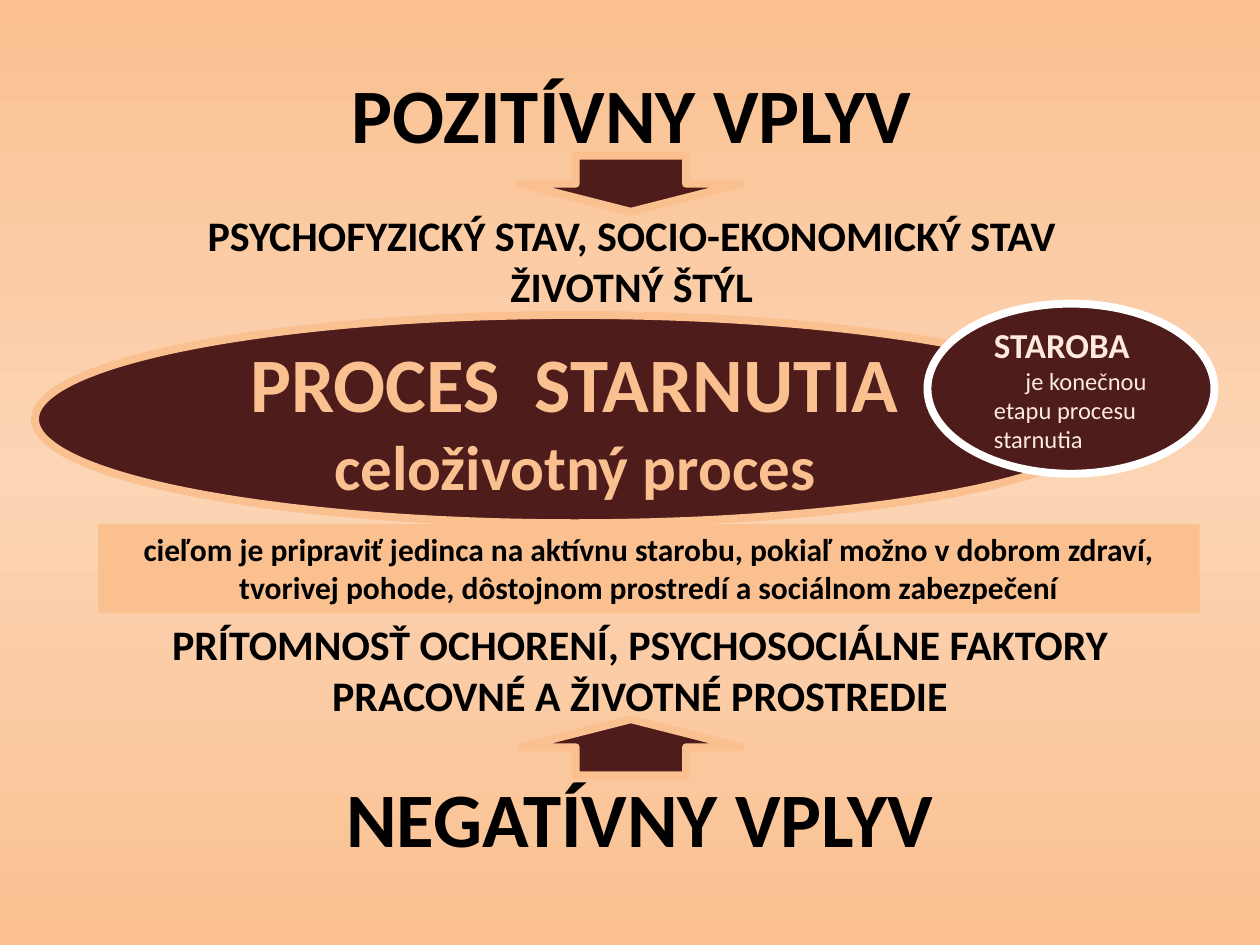
from copy import deepcopy

from pptx import Presentation
from pptx.dml.color import RGBColor
from pptx.enum import shapes, text
from pptx.oxml.ns import qn
from pptx.util import Pt

PEACH = RGBColor(0xFA, 0xC0, 0x90)
LIGHT_PEACH = RGBColor(0xFC, 0xD5, 0xB5)
CREAM = RGBColor(0xFD, 0xEA, 0xDA)
MAROON = RGBColor(0x4D, 0x1C, 0x1B)
WHITE = RGBColor(0xFF, 0xFF, 0xFF)
BLACK = RGBColor(0, 0, 0)

SHAPE = shapes.MSO_SHAPE
CENTER, LEFT = text.PP_ALIGN.CENTER, text.PP_ALIGN.LEFT
MIDDLE, TOP = text.MSO_ANCHOR.MIDDLE, text.MSO_ANCHOR.TOP
GAP = 29  # one line of 24 pt text
INSET, OVAL_INSET = 7.2, 14

# Paragraphs: (wording, size, bold, space before, first-line indent)
PROCESS = [("PROCES  STARNUTIA", 44, True, 0, 0),
           ("celoživotný proces", 36, True, 0, 0)]
POSITIVE = [("POZITÍVNY VPLYV", 44, True, 0, 0),
            ("PSYCHOFYZICKÝ STAV, SOCIO-EKONOMICKÝ STAV", 24, True, GAP, 0),
            ("ŽIVOTNÝ ŠTÝL", 24, True, 0, 0)]
NEGATIVE = [("PRÍTOMNOSŤ OCHORENÍ, PSYCHOSOCIÁLNE FAKTORY", 24, True, 0, 0),
            ("PRACOVNÉ A ŽIVOTNÉ PROSTREDIE", 24, True, 0, 0),
            ("NEGATÍVNY VPLYV", 44, True, GAP, 0)]
GOAL = [("cieľom je pripraviť jedinca na aktívnu starobu, pokiaľ možno v dobrom "
         "zdraví, tvorivej pohode, dôstojnom prostredí a sociálnom zabezpečení",
         18, True, 0, 0)]
OLD_AGE = [("STAROBA", 20, True, 0, 0),
           ("je konečnou etapu procesu starnutia", 14, False, 0, 18)]

# Back to front: (preset or None for a text box, box, fill, line, rotation,
#                 paragraphs, text colour, alignment, anchor, left inset)
ITEMS = [
    (SHAPE.OVAL, (20, 180, 617, 119), MAROON, PEACH, 0,
     PROCESS, PEACH, CENTER, MIDDLE, INSET),
    (SHAPE.DOWN_ARROW, (297.5, 89, 126, 32), MAROON, PEACH, 0,
     [], PEACH, CENTER, MIDDLE, INSET),
    (SHAPE.DOWN_ARROW, (297.5, 411, 126, 32), MAROON, PEACH, 180,
     [], PEACH, CENTER, MIDDLE, INSET),
    (None, (60.5, 34.5, 601, 148), None, None, 0,
     POSITIVE, BLACK, CENTER, TOP, INSET),
    (None, (46, 350, 639.5, 148), None, None, 0,
     NEGATIVE, BLACK, CENTER, TOP, INSET),
    (SHAPE.RECTANGLE, (56, 299.5, 629.5, 51), PEACH, None, 0,
     GOAL, BLACK, CENTER, TOP, INSET),
    (SHAPE.OVAL, (530, 173.5, 164, 97.2), MAROON, WHITE, 0,
     OLD_AGE, CREAM, LEFT, MIDDLE, OVAL_INSET),
]


def paint_background(slide):
    """Vertical gradient, lightest in the middle."""
    fill = slide.background.fill
    fill.gradient()
    fill.gradient_angle = 90
    stops = slide._element.find(".//" + qn("a:gsLst"))
    stops.insert(1, deepcopy(stops[0]))
    for stop, place, color in zip(fill.gradient_stops, (0, 0.5, 1),
                                  (PEACH, LIGHT_PEACH, PEACH)):
        stop.position = place
        stop.color.rgb = color


def write(tf, paragraphs, color, align, anchor, inset):
    tf.word_wrap = True
    tf.vertical_anchor = anchor
    tf.margin_left = Pt(inset)
    for i, (words, size, bold, before, indent) in enumerate(paragraphs):
        p = tf.add_paragraph() if i else tf.paragraphs[0]
        p.alignment = align
        p.space_before = Pt(before)
        if indent:
            p._p.get_or_add_pPr().set("indent", str(Pt(indent)))
        r = p.add_run()
        r.text = words
        r.font.color.rgb = color
        for name, value in dict(name="Calibri", size=Pt(size), bold=bold).items():
            setattr(r.font, name, value)


def add_item(slide, preset, box, fill, line, rotation, *content):
    place = [Pt(v) for v in box]
    if preset is None:
        sp = slide.shapes.add_textbox(*place)
    else:
        sp = slide.shapes.add_shape(preset, *place)
        sp.shadow.inherit = False
        sp.rotation = rotation
        sp.fill.solid()
        sp.fill.fore_color.rgb = fill
        if line is None:
            sp.line.fill.background()
        else:
            sp.line.color.rgb = line
            sp.line.width = Pt(4.5)
    write(sp.text_frame, *content)


def main():
    prs = Presentation()
    prs.slide_width, prs.slide_height = Pt(720), Pt(540)
    slide = prs.slides.add_slide(prs.slide_layouts[6])
    paint_background(slide)
    for item in ITEMS:
        add_item(slide, *item)
    prs.save("out.pptx")


if __name__ == "__main__":
    main()
